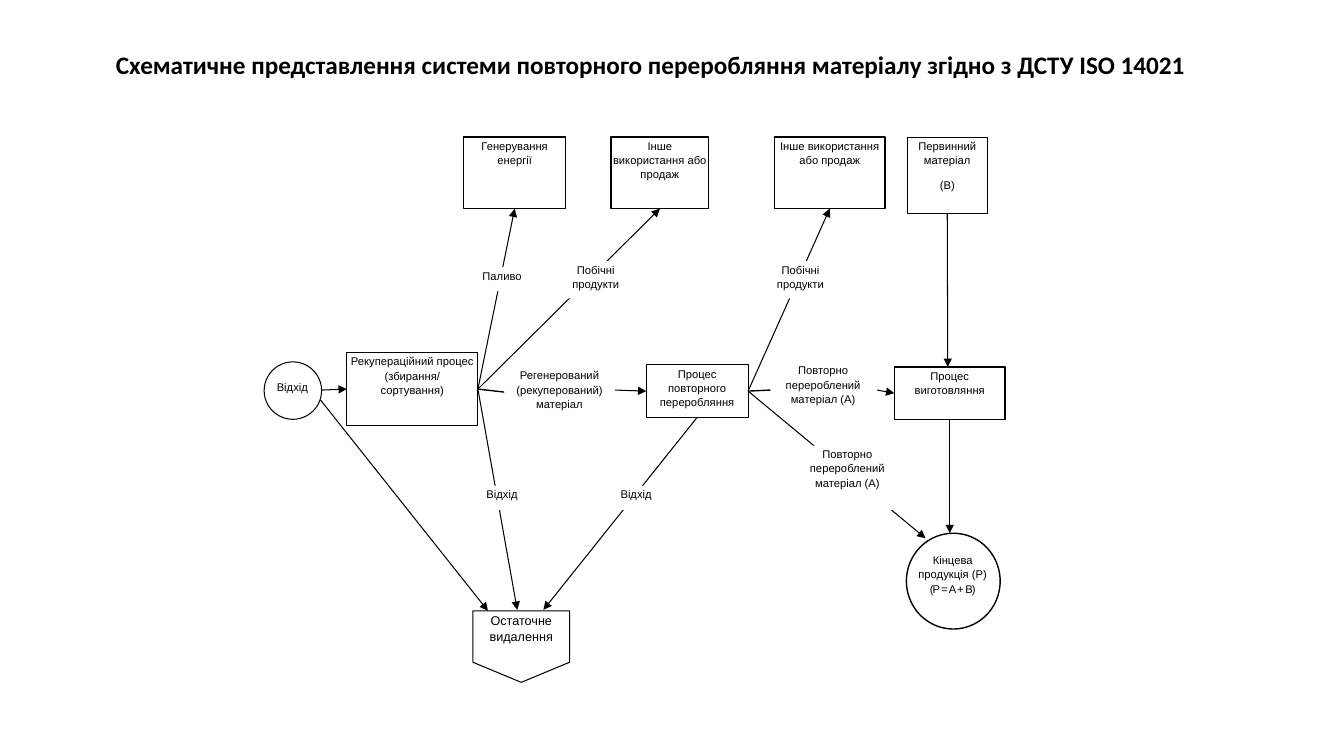
from copy import deepcopy

from lxml import etree
from pptx import Presentation
from pptx.dml.color import RGBColor
from pptx.enum import shapes, text
from pptx.oxml.ns import qn
from pptx.util import Inches, Pt

BLACK = RGBColor(0x00, 0x00, 0x00)
WHITE = RGBColor(0xFF, 0xFF, 0xFF)
TOP, LEFT, BOTTOM, RIGHT = range(4)

TITLE = "Схематичне представлення системи повторного переробляння матеріалу згідно з ДСТУ ISO 14021"

# name: (left, top, width, height, line width, paragraphs)
BOXES = {
    "energy": (4.6, 1.36, 1.01, 0.71, 1, ["Генерування енергії"]),
    "recovery_use": (6.06, 1.36, 0.97, 0.71, 1, ["Інше використання або продаж"]),
    "recycling_use": (7.68, 1.36, 1.1, 0.71, 1, ["Інше використання або продаж"]),
    "primary": (9, 1.36, 0.79, 0.76, 0.75, ["Первинний матеріал", "(B)"]),
    "recovery": (3.44, 3.5, 1.3, 0.72, 0.75,
                 ["Рекупераційний процес\n(збирання/\nсортування)"]),
    "recycling": (6.41, 3.62, 1.01, 0.52, 0.75, ["Процес\nповторного\nпереробляння"]),
    "manufacture": (8.87, 3.64, 1.1, 0.52, 1, ["Процес\nвиготовляння"]),
}

# left, top, width, height, line width
CIRCLES = [(2.62, 3.59, 0.57, 0.57, 0.75), (8.99, 5.29, 0.93, 0.95, 1)]

DISPOSAL_OUTLINE = [(4.69, 6.06), (5.65, 6.06), (5.65, 6.57), (5.17, 6.77), (4.69, 6.57)]

# An end is either a point or a (box name, side) pair
ARROWS = [
    ((3.19, 3.87), ("recovery", LEFT)),
    ((6.1, 3.87), ("recycling", LEFT)),
    ((8.7, 3.87), ("manufacture", LEFT)),
    (("recovery", RIGHT), ("energy", BOTTOM)),
    (("recovery", RIGHT), ("recovery_use", BOTTOM)),
    (("recycling", RIGHT), ("recycling_use", BOTTOM)),
    (("primary", BOTTOM), (9.4, 3.64)),
    (("manufacture", BOTTOM), (9.42, 5.29)),
    (("recycling", RIGHT), (9.18, 5.34)),
    ((3.18, 3.97), (4.84, 6.06)),
    (("recovery", RIGHT), (5.13, 6.05)),
    (("recycling", BOTTOM), (5.39, 6.05)),
]
PLAIN_LINES = [
    (("recovery", RIGHT), (5, 3.89)),
    (("recycling", RIGHT), (7.64, 3.87)),
]

# left, top, width, height, text
FLOW_LABELS = [
    (4.65, 2.65, 0.66, 0.24, "Паливо"),
    (5.58, 2.59, 0.66, 0.37, "Побічні продукти"),
    (7.61, 2.59, 0.66, 0.37, "Побічні продукти"),
    (7.9, 4.42, 1.01, 0.64, "Повторно\nперероблений\nматеріал (А)"),
    (4.65, 4.82, 0.66, 0.24, "Відхід"),
    (5.98, 4.82, 0.66, 0.24, "Відхід"),
]
OPEN_LABELS = [
    (2.66, 3.75, 0.48, 0.23, "Відхід"),
    (5, 3.64, 1.1, 0.57, "Регенерований\n(рекуперований)\nматеріал"),
    (7.63, 3.59, 1.07, 0.52, "Повторно\nперероблений\nматеріал (А)"),
]


def set_all(target, values):
    for name, value in values.items():
        setattr(target, name, value)


def write(frame, paragraphs, size=8):
    """Fill a frame with centred, top-anchored diagram text."""
    inset = Inches(0.01)
    set_all(frame, dict(word_wrap=True, vertical_anchor=text.MSO_ANCHOR.TOP,
                        margin_left=inset, margin_right=inset,
                        margin_top=inset, margin_bottom=inset))
    for index, words in enumerate(paragraphs):
        paragraph = frame.add_paragraph() if index else frame.paragraphs[0]
        paragraph.text = words
        set_all(paragraph, dict(alignment=text.PP_ALIGN.CENTER, line_spacing=1.07,
                                space_after=Pt(8)))
        for run in paragraph.runs:
            set_all(run.font, dict(name="Arial", size=Pt(size)))
            run.font.color.rgb = BLACK
        # Line breaks take the size of the text around them
        for line_break in paragraph._p.findall(qn("a:br")):
            line_break.insert(0, deepcopy(paragraph.runs[0]._r.rPr))


def outline(shape, weight):
    shape.shadow.inherit = False
    shape.fill.background()
    shape.line.color.rgb = BLACK
    shape.line.width = Pt(weight)


def add_outlined(slide, kind, left, top, width, height, weight):
    shape = slide.shapes.add_shape(kind, *map(Inches, (left, top, width, height)))
    outline(shape, weight)
    return shape


def add_label(slide, left, top, width, height, words, filled=False):
    label = slide.shapes.add_textbox(*map(Inches, (left, top, width, height)))
    if filled:
        label.fill.solid()
        label.fill.fore_color.rgb = WHITE
    write(label.text_frame, [words])
    return label


def add_line(slide, boxes, start, end, weight=0.75, arrow=True):
    def is_joined(place):
        return place[0] in boxes

    points = [(0, 0) if is_joined(place) else place for place in (start, end)]
    flow = slide.shapes.add_connector(
        shapes.MSO_CONNECTOR.STRAIGHT, *(Inches(v) for point in points for v in point))
    for place, join in ((start, flow.begin_connect), (end, flow.end_connect)):
        if is_joined(place):
            join(boxes[place[0]], place[1])
    flow.line.color.rgb = BLACK
    flow.line.width = Pt(weight)
    if arrow:
        etree.SubElement(flow.line._get_or_add_ln(), qn("a:tailEnd"), type="triangle")
    etree.SubElement(flow._element.spPr, qn("a:effectLst"))


def add_title(slide):
    title = slide.shapes.add_textbox(Inches(1.05), Inches(0.47), Inches(11.5), Inches(0.5))
    title.text_frame.word_wrap = True
    heading = title.text_frame.paragraphs[0]
    heading.line_spacing = 0.9
    run = heading.add_run()
    run.text = TITLE
    set_all(run.font, dict(name="Calibri", size=Pt(18), bold=True))
    run.font.color.rgb = BLACK


def add_disposal(slide):
    corners = [(Inches(x), Inches(y)) for x, y in DISPOSAL_OUTLINE]
    builder = slide.shapes.build_freeform(*corners[0])
    builder.add_line_segments(corners[1:], close=True)
    disposal = builder.convert_to_shape()
    outline(disposal, 0.75)
    write(disposal.text_frame, ["Остаточне видалення"], size=9)


def main():
    deck = Presentation()
    deck.slide_width, deck.slide_height = Inches(13.33), Inches(7.5)
    slide = deck.slides.add_slide(deck.slide_layouts[6])
    add_title(slide)

    # Processes, inputs and outputs
    boxes = {}
    for name, (*place, weight, paragraphs) in BOXES.items():
        boxes[name] = add_outlined(slide, shapes.MSO_SHAPE.RECTANGLE, *place, weight)
        write(boxes[name].text_frame, paragraphs)
    for circle in CIRCLES:
        add_outlined(slide, shapes.MSO_SHAPE.OVAL, *circle)
    add_disposal(slide)

    # Material flows
    for start, end in ARROWS:
        add_line(slide, boxes, start, end)
    for start, end in PLAIN_LINES:
        add_line(slide, boxes, start, end, weight=1, arrow=False)

    # Labels, the filled ones interrupting their arrows
    for label in OPEN_LABELS:
        add_label(slide, *label)
    for label in FLOW_LABELS:
        add_label(slide, *label, filled=True)
    product = add_label(slide, 9.07, 5.47, 0.76, 0.68, "Кінцева продукція (P)\n(P = A + B)")
    formula = product.text_frame.paragraphs[0].runs[-1]
    formula._r.rPr.set("spc", "-60")

    deck.save("out.pptx")


if __name__ == "__main__":
    main()
